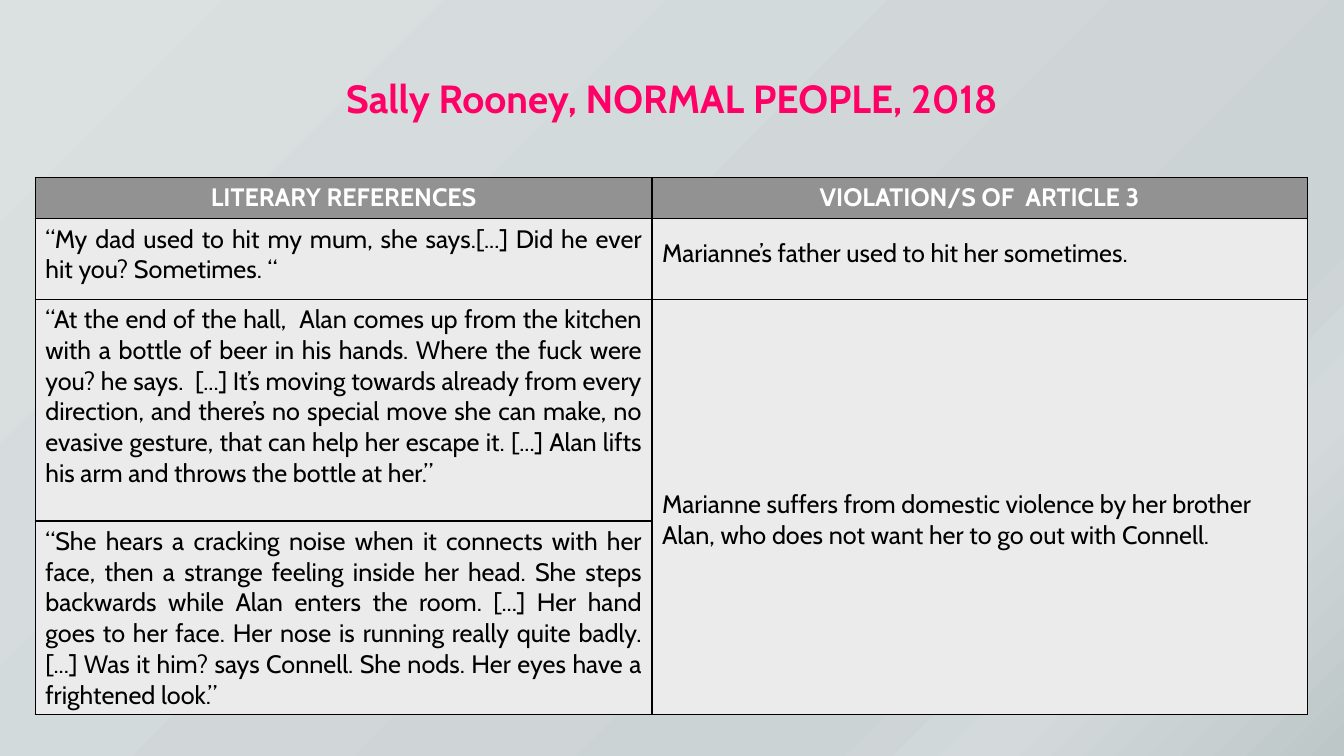
import pptx
import pptx.util
import pptx.dml.color
import pptx.enum.text
import pptx.oxml
import pptx.oxml.ns
import lxml.etree

Cm = pptx.util.Cm
Pt = pptx.util.Pt
ALIGN = pptx.enum.text.PP_ALIGN
qn = pptx.oxml.ns.qn

FONT = "Cabin"
COLORS = {
    "title": "FF0066",
    "header": "929292",
    "header_text": "FFFFFF",
    "body": "EBEBEB",
    "body_text": "000000",
    "border": "000000",
}
BACKGROUND = [(0, "DBE0E1"), (74, "CCD3D4"), (83, "D4DADB"), (100, "BEC7C8")]
COLUMNS = [15.54, 16.51]
ROWS = [1.04, 2.03, 5.59, 4.88]
HEADERS = ["LITERARY REFERENCES", "VIOLATION/S OF  ARTICLE 3"]
QUOTES = [
    "“My dad used to hit my mum, she says.[...] Did he ever hit you? Sometimes. “",
    "“At the end of the hall,  Alan comes up from the kitchen with a bottle of beer "
    "in his hands. Where the fuck were you? he says.  [...] It’s moving towards already "
    "from every direction, and there’s no special move she can make, no evasive gesture, "
    "that can help her escape it. [...] Alan lifts his arm and throws the bottle at her.”",
    "“She hears a cracking noise when it connects with her face, then a strange feeling "
    "inside her head. She steps backwards while Alan enters the room. [...] Her hand goes "
    "to her face. Her nose is running really quite badly. [...] Was it him? says Connell. "
    "She nods. Her eyes have a frightened look.”",
]
VIOLATIONS = [
    ("Marianne’s father used to hit her sometimes.", 0.5),
    ("Marianne suffers from domestic violence by her brother Alan, "
     "who does not want her to go out with Connell.", 4.79),
]


def rgb(name):
    """Return the named colour."""
    return pptx.dml.color.RGBColor.from_string(COLORS[name])


def write(tf, text, size, color, align, bold=False):
    """Put one formatted paragraph into a text frame."""
    tf.text = text
    p = tf.paragraphs[0]
    p.alignment = align
    font = p.runs[0].font
    font.name, font.size, font.bold = FONT, Pt(size), bold
    font.color.rgb = rgb(color)


def add_background(s):
    """Fill the slide with a diagonal gradient."""
    fill = s.background.fill
    fill.gradient()
    fill.gradient_angle = 315
    stops = s._element.find(".//" + qn("a:gsLst"))
    for stop in list(stops):
        stops.remove(stop)
    for position, color in BACKGROUND:
        gs = lxml.etree.SubElement(stops, qn("a:gs"), pos=str(position * 1000))
        lxml.etree.SubElement(gs, qn("a:srgbClr"), val=color)


def add_title(s, left, top, width, height):
    """Place the centred title in its box."""
    tf = s.shapes.add_textbox(left, top, width, height).text_frame
    tf.word_wrap = True
    write(tf, "Sally Rooney, NORMAL PEOPLE, 2018", 28, "title", ALIGN.CENTER, True)


def style_cell(cell, fill):
    """Give a cell thin borders and a solid fill."""
    tcPr = cell._tc.get_or_add_tcPr()
    for side in ("lnL", "lnR", "lnT", "lnB"):
        ln = lxml.etree.SubElement(tcPr, qn("a:" + side), w=str(Pt(1)))
        solid = lxml.etree.SubElement(ln, qn("a:solidFill"))
        lxml.etree.SubElement(solid, qn("a:srgbClr"), val=COLORS["border"])
    cell.fill.solid()
    cell.fill.fore_color.rgb = rgb(fill)


def add_references(s, left, top, width, height):
    """Place the table of quotations and violations."""
    table = s.shapes.add_table(len(ROWS), len(COLUMNS), left, top, width, height).table
    for column, size in zip(table.columns, COLUMNS):
        column.width = Cm(size)
    for i, (row, size) in enumerate(zip(table.rows, ROWS)):
        row.height = Cm(size)
        for cell in row.cells:
            style_cell(cell, "body" if i else "header")
    table.cell(2, 1).merge(table.cell(3, 1))
    for j, text in enumerate(HEADERS):
        write(table.cell(0, j).text_frame, text, 18, "header_text", ALIGN.CENTER, True)
    for i, text in enumerate(QUOTES, 1):
        write(table.cell(i, 0).text_frame, text, 18, "body_text", ALIGN.JUSTIFY)
    for i, (text, margin) in enumerate(VIOLATIONS, 1):
        cell = table.cell(i, 1)
        cell.margin_top = Cm(margin)
        write(cell.text_frame, text, 18, "body_text", ALIGN.LEFT)


def main():
    """Build and save the slide."""
    prs = pptx.Presentation()
    prs.slide_width, prs.slide_height = Cm(33.87), Cm(19.05)
    s = prs.slides.add_slide(prs.slide_layouts[6])
    add_background(s)
    add_title(s, Cm(0.89), Cm(1.75), Cm(32.08), Cm(2.72))
    add_references(s, Cm(0.89), Cm(4.47), Cm(sum(COLUMNS)), Cm(sum(ROWS)))
    prs.save("out.pptx")


if __name__ == "__main__":
    main()
